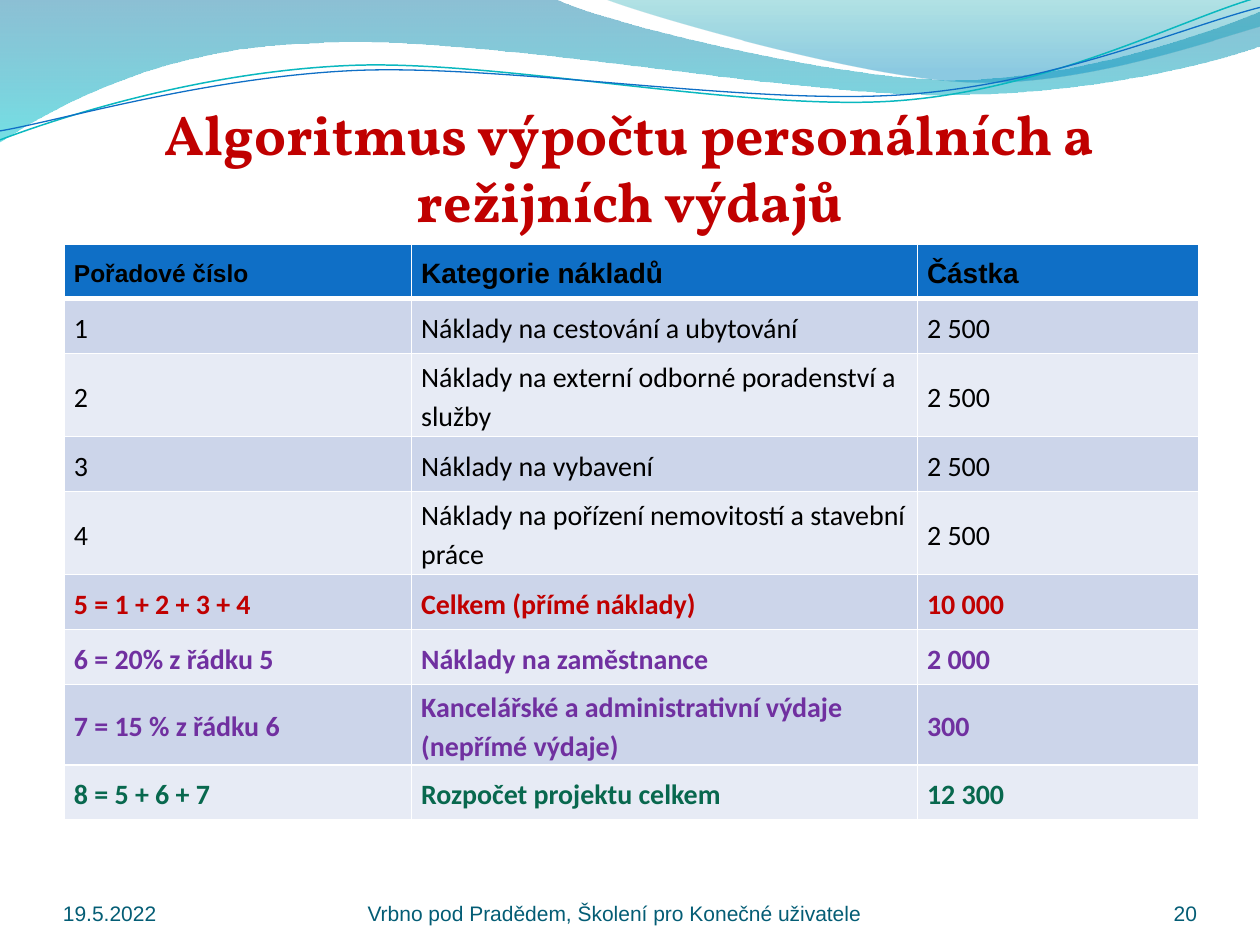
"""Build a slide with a table of project costs below a wave header."""
import math
from lxml import etree
from pptx import Presentation
from pptx import util as u
from pptx.dml.color import RGBColor
from pptx.enum import text
from pptx.oxml import ns

THEME = {
    "title": {"font": "Vollkorn", "size": 32, "color": "C00000", "bold": True},
    "small_head": {"font": "Arial", "size": 14, "color": "000000", "bold": True},
    "head": {"font": "Arial", "size": 16, "color": "000000", "bold": True},
    "body": {"font": "Calibri", "size": 16, "color": "000000", "bold": False},
    "direct": {"font": "Calibri", "size": 16, "color": "C00000", "bold": True},
    "derived": {"font": "Calibri", "size": 16, "color": "7030A0", "bold": True},
    "total": {"font": "Calibri", "size": 16, "color": "08684E", "bold": True},
    "footer": {"font": "Arial", "size": 12, "color": "045D75", "bold": False},
    "head_fill": "0F6FC6",
    "bands": ("CCD5EA", "E7EBF5"),
    "border": "FFFFFF",
}

TITLE = "Algoritmus výpočtu personálních a režijních výdajů"
HEADINGS = ("Pořadové číslo", "Kategorie nákladů", "Částka")
COSTS = [
    ("body", 1.11, ("1", "Náklady na cestování a ubytování", "2 500")),
    ("body", 1.67, ("2", "Náklady na externí odborné poradenství a služby", "2 500")),
    ("body", 1.11, ("3", "Náklady na vybavení", "2 500")),
    ("body", 1.67, ("4", "Náklady na pořízení nemovitostí a stavební práce", "2 500")),
    ("direct", 1.11, ("5 = 1 + 2 + 3 + 4", "Celkem (přímé náklady)", "10 000")),
    ("derived", 1.11, ("6 = 20% z řádku 5", "Náklady na zaměstnance", "2 000")),
    ("derived", 1.62, ("7 = 15 % z řádku 6", "Kancelářské a administrativní výdaje (nepřímé výdaje)", "300")),
    ("total", 1.11, ("8 = 5 + 6 + 7", "Rozpočet projektu celkem", "12 300")),
]
COLUMN_WIDTHS = (7, 10.2, 5.66)
HEAD_HEIGHT = 1.09
FOOTERS = [
    ("19.5.2022", 1.27, 5.92, text.PP_ALIGN.LEFT),
    ("Vrbno pod Pradědem, Školení pro Konečné uživatele", 7.41, 10.7, text.PP_ALIGN.LEFT),
    ("20", 22.02, 2.11, text.PP_ALIGN.RIGHT),
]

WAVES = [
    ((-0.01, 0), [
        [(11.18, -0.03)],
        [(12.09, 0.43), (16.87, 1.6), (19.25, 1.6)],
        [(21.67, 1.6), (24.33, 0.66), (25.4, 0.23)],
        [(25.43, 0.91)],
        [(24.97, 1.12), (22.1, 1.93), (18.95, 1.91)],
        [(15.8, 1.91), (9.7, 0.71), (6.53, 0.86)],
        [(3.28, 0.91), (1.17, 2.11), (-0.03, 2.87)],
    ], [(0, "0074A1", 45), (1, "00C6CF", 55)]),
    ((12.17, -0.03), [
        [(12.93, 0.28), (17.32, 1.57), (19.53, 1.65)],
        [(21.74, 1.75), (24.41, 0.81), (25.4, 0.53)],
        [(25.4, 0)],
    ], [(0, "00A1A9", 30), (0.8, "008BBF", 45)]),
]
RIPPLES = [
    ((0, 2.82), [
        [(1.22, 2.36), (4.01, 1.45), (7.04, 1.32)],
        [(10.03, 1.19), (15.06, 2.26), (18.11, 2.03)],
        [(21.16, 1.8), (23.83, 0.38), (25.35, -0.05)],
    ], (12.67, 1.46), "0AB8BF", 0.85),
    ((0, 2.64), [
        [(1.19, 2.44), (4.17, 1.55), (7.19, 1.42)],
        [(10.24, 1.3), (15.16, 2.13), (18.21, 1.91)],
        [(21.23, 1.7), (23.9, 0.53), (25.4, 0.15)],
    ], (12.69, 1.5), "0F6FC6", 0.75),
]
RIPPLE_TILT = -2.7


def rgb(value):
    return RGBColor.from_string(value)


def turn(point, center, degrees):
    angle = math.radians(degrees)
    x, y = point[0] - center[0], point[1] - center[1]
    return (
        center[0] + x * math.cos(angle) - y * math.sin(angle),
        center[1] + x * math.sin(angle) + y * math.cos(angle),
    )


def add_outline(page, start, segments, close):
    points = [point for segment in segments for point in segment]
    builder = page.shapes.build_freeform(*(u.Cm(length) for length in start))
    builder.add_line_segments([(u.Cm(x), u.Cm(y)) for x, y in points], close=close)
    outline = builder.convert_to_shape()
    outline.shadow.inherit = False
    steps = iter(list(outline._element.iter(ns.qn("a:lnTo"))))
    for segment in segments:
        first, *others = [next(steps) for _ in segment]
        if others:
            first.tag = ns.qn("a:cubicBezTo")
            for step in others:
                first.append(step[0])
                step.getparent().remove(step)
    return outline


def add_wave(page, start, segments, stops):
    wave = add_outline(page, start, segments, True)
    wave.line.fill.background()
    wave.fill.gradient()
    wave.fill.gradient_angle = 270
    for stop, (position, color, _) in zip(wave.fill.gradient_stops, stops):
        stop.position = position
        stop.color.rgb = rgb(color)
    tags = wave._element.spPr.iter(ns.qn("a:srgbClr"))
    for tag, (_, _, opacity) in zip(tags, stops):
        etree.SubElement(tag, ns.qn("a:alpha"), val=str(opacity * 1000))


def add_ripple(page, start, segments, center, color, width):
    level = [[turn(point, center, -RIPPLE_TILT) for point in segment] for segment in segments]
    ripple = add_outline(page, turn(start, center, -RIPPLE_TILT), level, False)
    ripple.rotation = RIPPLE_TILT
    ripple.fill.background()
    ripple.line.color.rgb = rgb(color)
    ripple.line.width = u.Pt(width)


def write(frame, words, style, align=text.PP_ALIGN.LEFT, spacing=None):
    para = frame.paragraphs[0]
    para.alignment = align
    para.line_spacing = spacing
    span = para.add_run()
    span.text = words
    span.font.name = style["font"]
    span.font.size = u.Pt(style["size"])
    span.font.bold = style["bold"]
    span.font.color.rgb = rgb(style["color"])


def add_text(page, words, style, place, align):
    box = page.shapes.add_textbox(*(u.Cm(length) for length in place))
    frame = box.text_frame
    frame.word_wrap = True
    frame.vertical_anchor = text.MSO_ANCHOR.BOTTOM
    frame.margin_left = frame.margin_right = frame.margin_top = frame.margin_bottom = 0
    write(frame, words, style, align)


def add_borders(cell, bottom):
    properties = cell._tc.get_or_add_tcPr()
    for side, points in (("L", 1), ("R", 1), ("T", 1), ("B", bottom)):
        line = etree.SubElement(properties, ns.qn(f"a:ln{side}"), w=str(u.Pt(points)))
        solid = etree.SubElement(line, ns.qn("a:solidFill"))
        etree.SubElement(solid, ns.qn("a:srgbClr"), val=THEME["border"])


def fill_cell(cell, words, style, color, bottom=1):
    cell.margin_left = cell.margin_right = u.Cm(0.19)
    cell.margin_top = cell.margin_bottom = 0
    cell.vertical_anchor = text.MSO_ANCHOR.MIDDLE
    add_borders(cell, bottom)
    cell.fill.solid()
    cell.fill.fore_color.rgb = rgb(color)
    write(cell.text_frame, words, style, spacing=1.15)


def add_costs(page):
    heights = [HEAD_HEIGHT] + [height for _, height, _ in COSTS]
    table = page.shapes.add_table(
        len(heights), len(COLUMN_WIDTHS), u.Cm(1.3), u.Cm(4.93),
        u.Cm(sum(COLUMN_WIDTHS)), u.Cm(sum(heights)),
    ).table
    for column, width in zip(table.columns, COLUMN_WIDTHS):
        column.width = u.Cm(width)
    for row, height in zip(table.rows, heights):
        row.height = u.Cm(height)
    for index, words in enumerate(HEADINGS):
        style = THEME["head" if index else "small_head"]
        fill_cell(table.cell(0, index), words, style, THEME["head_fill"], bottom=3)
    for number, (style, _, entries) in enumerate(COSTS):
        for index, words in enumerate(entries):
            cell = table.cell(number + 1, index)
            fill_cell(cell, words, THEME[style], THEME["bands"][number % 2])


def main():
    deck = Presentation()
    deck.slide_width, deck.slide_height = u.Cm(25.4), u.Cm(19.05)
    page = deck.slides.add_slide(deck.slide_layouts[6])
    for wave in WAVES:
        add_wave(page, *wave)
    for ripple in RIPPLES:
        add_ripple(page, *ripple)
    add_text(page, TITLE, THEME["title"], (1.27, 2.13, 22.86, 2.59), text.PP_ALIGN.CENTER)
    add_costs(page)
    for words, left, width, align in FOOTERS:
        add_text(page, words, THEME["footer"], (left, 17.65, width, 1.02), align)
    deck.save("out.pptx")


if __name__ == "__main__":
    main()
